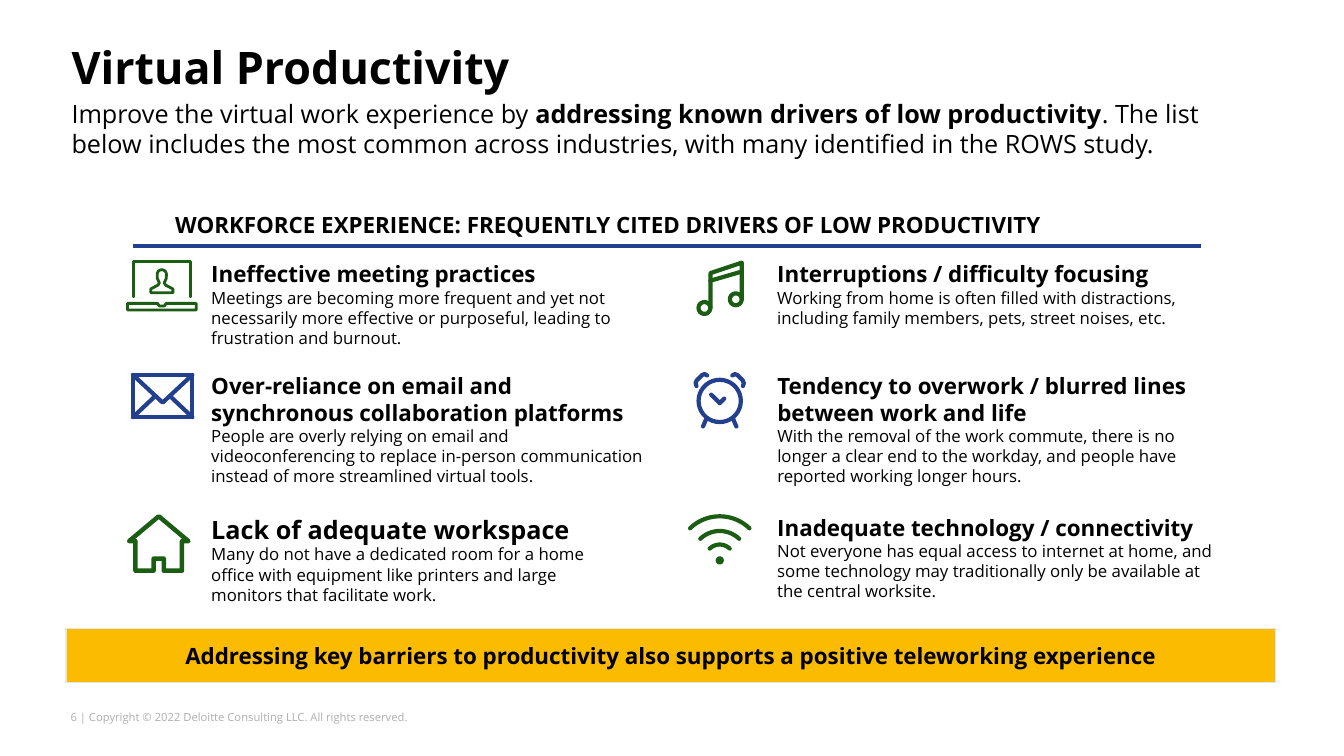
from math import cos, radians, sin

from lxml.etree import SubElement
from pptx import Presentation
from pptx.dml.color import RGBColor
from pptx.enum.shapes import MSO_CONNECTOR, MSO_SHAPE
from pptx.enum.text import MSO_ANCHOR, MSO_AUTO_SIZE, PP_ALIGN
from pptx.oxml.ns import qn
from pptx.util import Pt

GREEN, BLUE, GOLD = "1B5D13", "23408E", "FABB01"
LEFT_TEXT, RIGHT_TEXT = 150.9, 555.2
ROW_TOPS = [186, 265.7, 367.1]
CLOCK_X, WIFI_X = 514.1, 514.1

# Per driver: row, left edge, width, heading, heading size, explanation
DRIVERS = [
    (0, LEFT_TEXT, 338.4, "Ineffective meeting practices", 16,
     "Meetings are becoming more frequent and yet not necessarily more effective "
     "or purposeful, leading to frustration and burnout."),
    (0, RIGHT_TEXT, 338.4, "Interruptions / difficulty focusing", 16,
     "Working from home is often filled with distractions, including family "
     "members, pets, street noises, etc."),
    (1, LEFT_TEXT, 310.3, "Over-reliance on email and synchronous collaboration platforms", 16,
     "People are overly relying on email and videoconferencing to replace "
     "in-person communication instead of more streamlined virtual tools."),
    (1, RIGHT_TEXT, 296.6, "Tendency to overwork / blurred lines between work and life", 16,
     "With the removal of the work commute, there is no longer a clear end to the "
     "workday, and people have reported working longer hours."),
    (2, LEFT_TEXT, 296.6, "Lack of adequate workspace", 18,
     "Many do not have a dedicated room for a home office with equipment like "
     "printers and large monitors that facilitate work."),
    (2, RIGHT_TEXT, 313.9, "Inadequate technology / connectivity", 16,
     "Not everyone has equal access to internet at home, and some technology may "
     "traditionally only be available at the central worksite."),
]


def rgb(value):
    return RGBColor.from_string(value)


# Text
def write(paragraph, text, size=12, bold=False, color="000000"):
    run = paragraph.add_run()
    run.text = text
    run.font.name = "Open Sans"
    run.font.size = Pt(size)
    run.font.bold = bold
    run.font.color.rgb = rgb(color)


def set_frame(frame, inset=(0, 0), wrap=True):
    frame.word_wrap = wrap
    frame.auto_size = MSO_AUTO_SIZE.NONE
    frame.vertical_anchor = MSO_ANCHOR.TOP
    frame.margin_left = frame.margin_right = Pt(inset[0])
    frame.margin_top = frame.margin_bottom = Pt(inset[1])
    return frame


def text_frame(slide, left, top, width, height, **layout):
    box = slide.shapes.add_textbox(Pt(left), Pt(top), Pt(width), Pt(height))
    return set_frame(box.text_frame, **layout)


def placeholder_paragraph(holder, left, top, width, height):
    holder.left, holder.top = Pt(left), Pt(top)
    holder.width, holder.height = Pt(width), Pt(height)
    paragraph = set_frame(holder.text_frame).paragraphs[0]
    properties = paragraph._p.get_or_add_pPr()
    properties.set("marL", "0")
    properties.set("indent", "0")
    SubElement(properties, qn("a:buNone"))
    paragraph.alignment = PP_ALIGN.LEFT
    paragraph.space_before = Pt(0)
    return paragraph


def driver(slide, row, left, width, heading, size, explanation):
    frame = text_frame(slide, left, ROW_TOPS[row], width, 63.4 if row != 1 else 82)
    write(frame.paragraphs[0], heading, size=size, bold=True)
    write(frame.add_paragraph(), explanation)


# Icon strokes
def set_outline(shape, color, weight):
    shape.shadow.inherit = False
    shape.line.color.rgb = rgb(color)
    shape.line.width = Pt(weight)


def draw_strokes(slide, strokes, color, weight=3):
    """Draw all strokes as one outline; a stroke that ends at its start is closed."""
    builder = None
    for points in strokes:
        corners = [(Pt(x), Pt(y)) for x, y in points]
        if builder is None:
            builder = slide.shapes.build_freeform(*corners[0], scale=1.0)
        else:
            builder.move_to(*corners[0])
        closed = corners[0] == corners[-1]
        builder.add_line_segments(corners[1:-1] if closed else corners[1:], close=closed)
    outline = builder.convert_to_shape()
    outline.fill.background()
    set_outline(outline, color, weight)
    line = outline._element.spPr.find(qn("a:ln"))
    line.set("cap", "rnd")
    SubElement(line, qn("a:round"))


def arc(x, y, radius, start, end, steps=20):
    angles = [radians(start + (end - start) * i / steps) for i in range(steps + 1)]
    return [(x + radius * cos(a), y + radius * sin(a)) for a in angles]


def circle(x, y, radius):
    ring = arc(x, y, radius, 0, 360, 36)
    return ring[:-1] + ring[:1]


def mirror(points, axis):
    return [(2 * axis - x, y) for x, y in reversed(points)]


def symmetric(half, axis, closed=True):
    return half + mirror(half, axis) + (half[:1] if closed else [])


# Icons
def laptop_icon(slide):
    axis = 115.6
    screen = [(95.4, 212), (95.4, 186.8)]
    base = [(91.1, 221.4), (91.1, 216.7), (112.5, 216.7), (113.8, 218.6)]
    person = [(107.7, 209.1), (107.7, 206.4), (113, 203.6), (113.8, 202),
              (112.4, 198.8)] + arc(axis, 196, 3.3, 180, 270, 8)
    for half, closed in ((screen, False), (base, True), (person, True)):
        draw_strokes(slide, [symmetric(half, axis, closed)], GREEN, 2)


def music_icon(slide):
    stems = [(507.5, 220), (507.5, 195.1), (529.9, 187.6), (529.9, 213.8)]
    beam = [(507.5, 200.5), (529.9, 194)]
    draw_strokes(slide, [stems, beam, circle(503.2, 220, 4.2), circle(525.6, 213.8, 4.2)], GREEN)


def envelope_icon(slide):
    axis = 116.2
    left, right, top, bottom = 95, 137.4, 267.8, 298
    border = [(left, top), (right, top), (right, bottom), (left, bottom), (left, top)]
    flap = [(left, top), (axis, 287.6), (right, top)]
    fold = [(left, bottom), (109.8, 284)]
    draw_strokes(slide, [border, flap, fold, mirror(fold, axis)], BLUE)


def clock_icon(slide):
    hands = [(508, 281.9), (CLOCK_X, 288), (517.3, 284.8)]
    leg = [(504.4, 299.5), (502.2, 304.6)]
    bell = [(505.1, 268.2), (503.3, 267.2), (501.5, 267.9), (497.6, 271.8),
            (496.9, 273.7), (497.5, 275.8)]
    pairs = [side for part in (leg, bell) for side in (part, mirror(part, CLOCK_X))]
    draw_strokes(slide, [circle(CLOCK_X, 286.4, 15.1), hands] + pairs, BLUE)


def house_icon(slide):
    half = [(109.8, 399), (109.8, 407.7), (96.8, 407.7), (96.8, 386.6),
            (92.2, 386.6), (113.4, 368.8)]
    draw_strokes(slide, [symmetric(half, 113.4)], GREEN, 3.2)


def wifi_icon(slide):
    waves = [arc(WIFI_X, 399.3, radius, 226, 314) for radius in (10.3, 20, 30.5)]
    draw_strokes(slide, waves + [circle(WIFI_X, 400.3, 1.4)], GREEN)


def main():
    deck = Presentation()
    deck.slide_width, deck.slide_height = Pt(960), Pt(540)
    slide = deck.slides.add_slide(deck.slide_layouts[1])

    # Title and introduction
    title = placeholder_paragraph(slide.shapes.title, 51.1, 32.7, 804.2, 46.8)
    title.line_spacing = 0.9
    write(title, "Virtual Productivity", size=32, bold=True)
    intro = placeholder_paragraph(slide.placeholders[1], 51.1, 70.1, 823.7, 43.9)
    write(intro, "Improve the virtual work experience by ", size=18)
    write(intro, "addressing known drivers of low productivity", size=18, bold=True)
    write(intro, ". The list below includes the most common across industries, "
                 "with many identified in the ROWS study.", size=18)

    # Section heading and rule
    section = text_frame(slide, 118.1, 147.6, 742.3, 26.6, inset=(7.2, 3.6))
    write(section.paragraphs[0], "WORKFORCE EXPERIENCE: FREQUENTLY CITED DRIVERS OF LOW PRODUCTIVITY",
          size=16, bold=True)
    rule = slide.shapes.add_connector(MSO_CONNECTOR.STRAIGHT, Pt(95), Pt(175.9), Pt(858.2), Pt(175.9))
    rule.line.color.rgb = rgb(BLUE)
    rule.line.width = Pt(3)
    SubElement(rule._element.spPr, qn("a:effectLst"))

    # Drivers and their icons
    for entry in DRIVERS:
        driver(slide, *entry)
    for draw_icon in (laptop_icon, music_icon, envelope_icon, clock_icon, house_icon, wifi_icon):
        draw_icon(slide)

    # Takeaway bar
    takeaway = slide.shapes.add_shape(MSO_SHAPE.RECTANGLE, Pt(47.2), Pt(448.8), Pt(864), Pt(38.9))
    set_outline(takeaway, "E7E6E6", 1)
    takeaway.fill.solid()
    takeaway.fill.fore_color.rgb = rgb(GOLD)
    takeaway.text_frame.vertical_anchor = MSO_ANCHOR.MIDDLE
    message = takeaway.text_frame.paragraphs[0]
    message.alignment = PP_ALIGN.CENTER
    write(message, "Addressing key barriers to productivity also supports a positive teleworking experience",
          size=16, bold=True)

    # Footer
    footer = text_frame(slide, 50.4, 507.6, 251.3, 9.4, wrap=False)
    write(footer.paragraphs[0], "6 | Copyright © 2022 Deloitte Consulting LLC. All rights reserved.",
          size=8, color="AEAEAE")

    deck.save("out.pptx")


if __name__ == "__main__":
    main()
